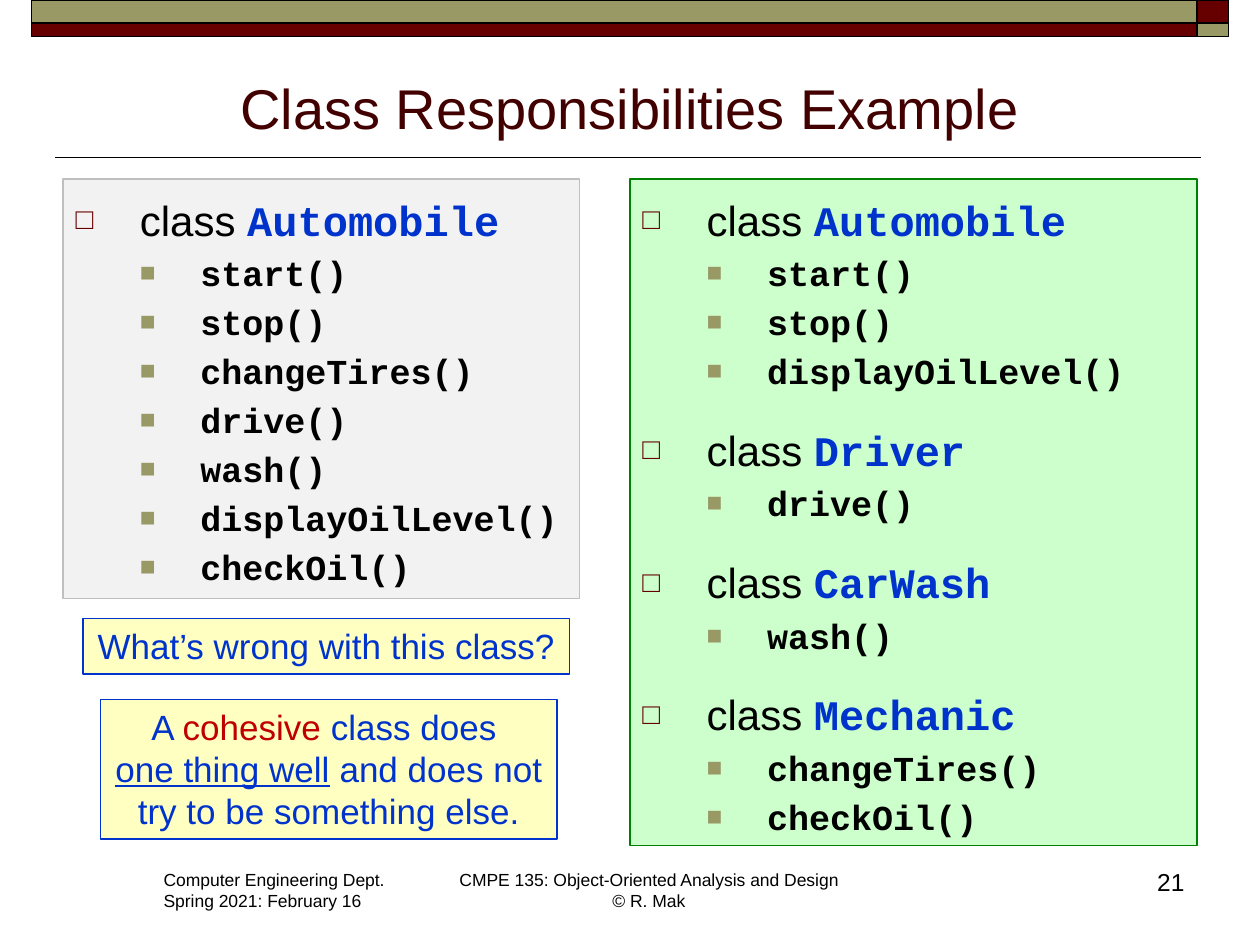
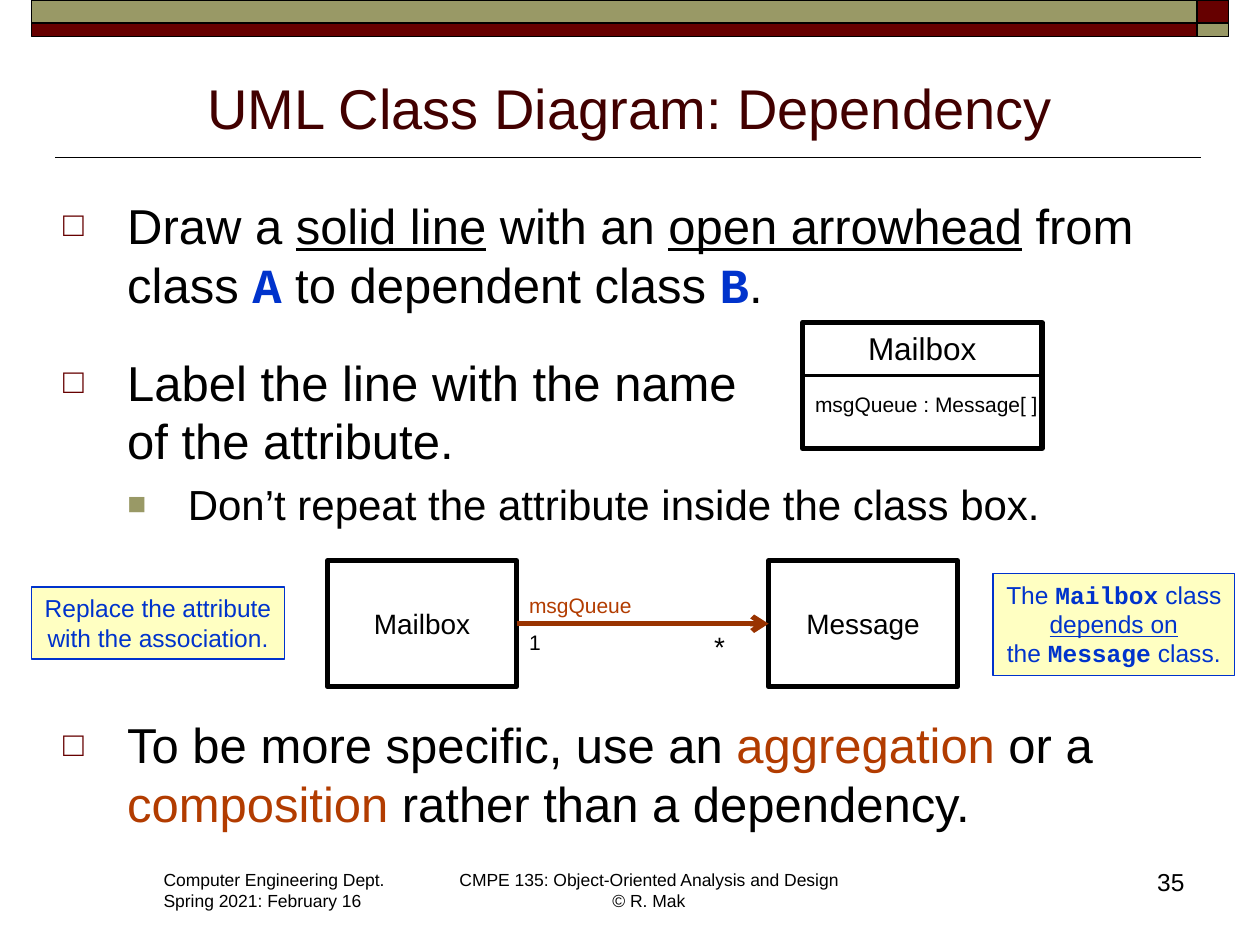
"""Build two object-oriented design slides with a shared header and footer."""
from lxml import etree
from pptx import Presentation
from pptx.dml.color import RGBColor
from pptx.enum.shapes import MSO_CONNECTOR as Connector, MSO_SHAPE as Shape
from pptx.enum.text import MSO_ANCHOR as Anchor, MSO_AUTO_SIZE as AutoSize, PP_ALIGN as Align
from pptx.oxml.ns import qn
from pptx.util import Inches, Pt

COLORS = {
    "maroon": "660000", "olive": "999966", "title": "420000", "black": "000000",
    "blue": "0033CC", "red": "C00000", "rust": "B23C00", "arrow": "993300",
    "note": "FFFFC2", "gray": "F2F2F2", "gray line": "BFBFBF",
    "green": "CCFFCC", "green line": "008000",
}
STYLES = {
    "code": {"font": "Courier New", "color": "blue", "bold": True},
    "method": {"font": "Courier New", "bold": True},
    "underline": {"underline": True},
    "red": {"color": "red"},
    "rust": {"color": "rust"},
}
BULLETS = [
    {"left": 0.51, "hanging": 0.51, "char": "□", "color": "maroon", "percent": 70},
    {"left": 0.99, "hanging": 0.48, "char": "■", "color": "olive", "percent": 75},
]

BANDS = [
    ((9.5, 0, 0.25, 0.18), "maroon"),
    ((0.25, 0, 9.25, 0.18), "olive"),
    ((0.25, 0.18, 9.25, 0.11), "maroon"),
    ((9.5, 0.18, 0.25, 0.11), "olive"),
]
DEPARTMENT = ["Computer Engineering Dept.", "Spring 2021: February 16"]
COURSE = ["CMPE 135: Object-Oriented Analysis and Design\v© R. Mak"]

BEFORE_CLASSES = [
    ("Automobile", ["start()", "stop()", "changeTires()", "drive()", "wash()",
                    "displayOilLevel()", "checkOil()"]),
]
AFTER_CLASSES = [
    ("Automobile", ["start()", "stop()", "displayOilLevel()"]),
    ("Driver", ["drive()"]),
    ("CarWash", ["wash()"]),
    ("Mechanic", ["changeTires()", "checkOil()"]),
]
COHESION_NOTES = [
    ((0.66, 4.91, 3.86, 0.44), ["What’s wrong with this class?"]),
    ((0.8, 5.55, 3.62, 1.11), [
        ["A ", ("cohesive", "red"), " class does "],
        [("one thing well", "underline"), " and does not\vtry to be something else."],
    ]),
]

DEPENDENCY_POINTS = [
    (0, 28, 0, ["Draw a ", ("solid line", "underline"), " with an ",
                ("open arrowhead", "underline"), " from class ", ("A", "code"),
                " to dependent class ", ("B", "code"), "."]),
    (0, 28, 22.4, "Label the line with the name \vof the attribute."),
    (1, 24, 4.8, "Don’t repeat the attribute inside the class box."),
    (0, 28, 106.4, ["To be more specific, use an ", ("aggregation", "rust"), " or a ",
                    ("composition ", "rust"), "rather than a dependency."]),
]
ASSOCIATION_LABELS = [
    ((4.1, 4.65, 1.01, 0.3), "msgQueue", 12, "rust"),
    ((4.1, 4.95, 0.29, 0.3), "1", 12, "black"),
    ((5.57, 4.95, 0.33, 0.5), "*", 16, "black"),
]
DEPENDENCY_NOTES = [
    ((0.25, 4.66, 2.01, 0.57), ["Replace the attribute", "with the association."]),
    ((7.88, 4.55, 1.92, 0.81), [
        ["The ", ("Mailbox", "code"), " class"],
        [("depends on", "underline")],
        ["the ", ("Message", "code"), " class."],
    ]),
]


def rgb(color):
    return RGBColor.from_string(COLORS[color])


def place(shape, box):
    shape.left, shape.top, shape.width, shape.height = (Inches(value) for value in box)


def fill_paragraph(paragraph, content, size, color="black"):
    parts = [content] if isinstance(content, str) else content
    for part in parts:
        text, style_name = (part, None) if isinstance(part, str) else part
        style = STYLES.get(style_name, {})
        for index, line in enumerate(text.split("\v")):
            if index:
                paragraph.add_line_break()
            run = paragraph.add_run()
            run.text = line
            font = run.font
            font.size = Pt(size)
            font.name = style.get("font", "Arial")
            font.color.rgb = rgb(style.get("color", color))
            font.bold = style.get("bold", False)
            font.underline = style.get("underline", False)


def next_paragraph(frame, index):
    return frame.add_paragraph() if index else frame.paragraphs[0]


def write(shape, lines, size, color="black", align=Align.LEFT, anchor=Anchor.TOP, wrap=False):
    frame = shape.text_frame
    frame.word_wrap = wrap
    frame.auto_size = AutoSize.NONE
    frame.vertical_anchor = anchor
    for index, line in enumerate(lines):
        paragraph = next_paragraph(frame, index)
        paragraph.alignment = align
        fill_paragraph(paragraph, line, size, color)


def add_bullet(paragraph, level):
    bullet = BULLETS[level]
    paragraph.level = level
    properties = paragraph._p.get_or_add_pPr()
    properties.set("marL", str(Inches(bullet["left"])))
    properties.set("indent", str(-Inches(bullet["hanging"])))
    color = etree.SubElement(properties, qn("a:buClr"))
    etree.SubElement(color, qn("a:srgbClr"), val=COLORS[bullet["color"]])
    etree.SubElement(properties, qn("a:buSzPct"), val=str(bullet["percent"] * 1000))
    etree.SubElement(properties, qn("a:buFont"), typeface="Arial")
    etree.SubElement(properties, qn("a:buChar"), char=bullet["char"])


def write_list(shape, items, margin_top):
    frame = shape.text_frame
    frame.word_wrap = True
    frame.auto_size = AutoSize.NONE
    frame.vertical_anchor = Anchor.TOP
    frame.margin_top = Inches(margin_top)
    for index, (level, size, space_before, content) in enumerate(items):
        paragraph = next_paragraph(frame, index)
        add_bullet(paragraph, level)
        paragraph.alignment = Align.LEFT
        paragraph.space_before = Pt(space_before)
        fill_paragraph(paragraph, content, size)


def class_items(classes):
    items = []
    for name, methods in classes:
        items.append((0, 24, 18.8 if items else 0, ["class ", (name, "code")]))
        items += [(1, 20, 4, [(method, "method")]) for method in methods]
    return items


def paint(shape, fill, line, width):
    if fill:
        shape.fill.solid()
        shape.fill.fore_color.rgb = rgb(fill)
    else:
        shape.fill.background()
    shape.line.color.rgb = rgb(line)
    shape.line.width = Pt(width)


def add_rectangle(slide, box, fill=None, line="black", width=1):
    shape = slide.shapes.add_shape(Shape.RECTANGLE, *(Inches(value) for value in box))
    shape.shadow.inherit = False
    paint(shape, fill, line, width)
    return shape


def add_text(slide, box, lines, size, **options):
    shape = slide.shapes.add_textbox(*(Inches(value) for value in box))
    write(shape, lines, size, **options)


def add_line(slide, start, end, color, width):
    line = slide.shapes.add_connector(
        Connector.STRAIGHT, *(Inches(value) for value in (*start, *end)))
    line.line.color.rgb = rgb(color)
    line.line.width = Pt(width)
    etree.SubElement(line._element.spPr, qn("a:effectLst"))
    return line


def add_notes(slide, notes, size):
    for box, lines in notes:
        note = add_rectangle(slide, box, "note", "blue", 0.75)
        write(note, lines, size, color="blue", align=Align.CENTER)


def add_slide(presentation, title, number):
    slide = presentation.slides.add_slide(presentation.slide_layouts[1])
    add_line(slide, (9.53, 1.25), (0.44, 1.25), "black", 1)
    for box, color in BANDS:
        add_rectangle(slide, box, color)
    add_text(slide, (1.2, 6.85, 1.97, 0.44), DEPARTMENT, 10)
    add_text(slide, (3.53, 6.85, 3.24, 0.44), COURSE, 10, align=Align.CENTER)
    add_text(slide, (8.9, 6.83, 0.6, 0.5), [number], 14, align=Align.RIGHT, wrap=True)
    heading = slide.shapes.title
    place(heading, (0.5, 0.45, 9, 0.72))
    write(heading, [title], 32, color="title", align=Align.CENTER, anchor=Anchor.BOTTOM, wrap=True)
    return slide


def build_responsibilities(presentation):
    slide = add_slide(presentation, "Class Responsibilities Example", "21")
    before = slide.placeholders[1]
    place(before, (0.5, 1.42, 4.1, 3.33))
    paint(before, "gray", "gray line", 0.75)
    write_list(before, class_items(BEFORE_CLASSES), 0.12)
    after = add_rectangle(slide, (5, 1.42, 4.5, 5.29), "green", "green line", 0.75)
    write_list(after, class_items(AFTER_CLASSES), 0.12)
    add_notes(slide, COHESION_NOTES, 20)


def build_dependency(presentation):
    slide = add_slide(presentation, "UML Class Diagram: Dependency", "35")
    body = slide.placeholders[1]
    place(body, (0.4, 1.42, 9.1, 5.33))
    write_list(body, DEPENDENCY_POINTS, 0.13)

    classes = []
    for name, left in (("Mailbox", 2.6), ("Message", 6.1)):
        box = add_rectangle(slide, (left, 4.45, 1.5, 1), width=3)
        write(box, [name], 16, align=Align.CENTER, anchor=Anchor.MIDDLE)
        classes.append(box)
    mailbox, message = classes
    association = add_line(slide, (4.1, 4.95), (6.1, 4.95), "arrow", 3)
    association.begin_connect(mailbox, 3)
    association.end_connect(message, 1)
    etree.SubElement(association.line._get_or_add_ln(), qn("a:tailEnd"), type="arrow")
    for box, text, size, color in ASSOCIATION_LABELS:
        add_text(slide, box, [text], size, color=color)

    add_rectangle(slide, (6.37, 2.56, 1.9, 1), width=3)
    class_name = add_rectangle(slide, (6.37, 2.56, 1.9, 0.42), width=1.5)
    write(class_name, ["Mailbox"], 18, align=Align.CENTER, wrap=True)
    add_text(slide, (6.37, 3.06, 1.99, 0.3), ["msgQueue : Message[ ]"], 12)
    add_notes(slide, DEPENDENCY_NOTES, 14)


def main():
    presentation = Presentation()
    presentation.slide_width, presentation.slide_height = Inches(10), Inches(7.5)
    build_responsibilities(presentation)
    build_dependency(presentation)
    presentation.save("out.pptx")


if __name__ == "__main__":
    main()
